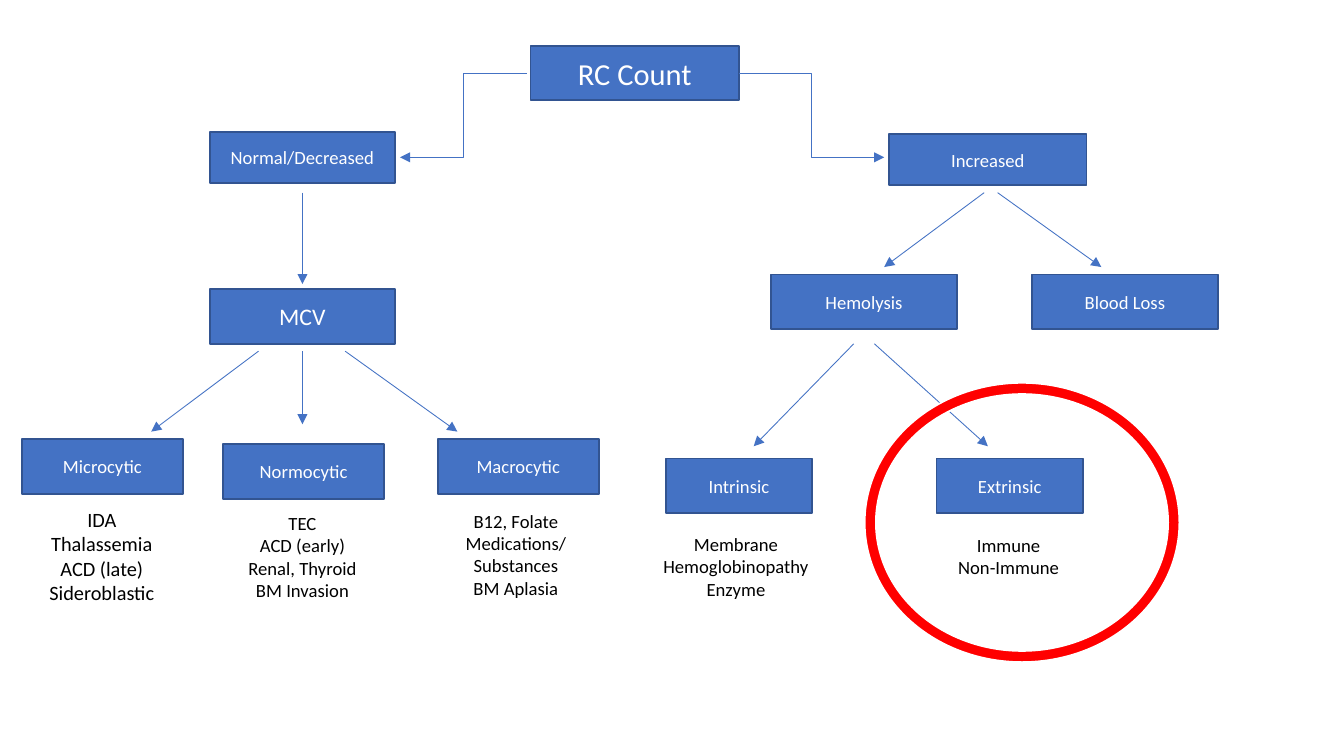
from pptx import Presentation
from pptx.dml.color import RGBColor as RGB
from pptx.enum.shapes import MSO_CONNECTOR as LINK, MSO_SHAPE as SHAPE
from pptx.enum.text import MSO_ANCHOR as ANCHOR, MSO_AUTO_SIZE as AUTO, PP_ALIGN as ALIGN
from pptx.oxml.ns import qn
from pptx.util import Inches, Pt
from lxml.etree import SubElement

COLORS = {"blue": "4472C4", "edge": "325491", "red": "FF0000",
          "white": "FFFFFF", "black": "000000"}
FRAME = {"word_wrap": True, "vertical_anchor": ANCHOR.MIDDLE}
NOTE = {"word_wrap": True, "auto_size": AUTO.SHAPE_TO_FIT_TEXT}


def color(name):
    return RGB.from_string(COLORS[name])


def inches(*values):
    return [Inches(v) for v in values]


def style(item, values):
    for name, value in values.items():
        setattr(item, name, value)


def write(frame, lines, size, ink, layout):
    style(frame, layout)
    for i, line in enumerate(lines):
        para = frame.paragraphs[0] if i == 0 else frame.add_paragraph()
        para.alignment = ALIGN.CENTER
        run = para.add_run()
        run.text = line
        style(run.font, {"name": "Calibri", "size": Pt(size)})
        run.font.color.rgb = color(ink)


def shape(slide, kind, box, fill, edge):
    item = slide.shapes.add_shape(kind, *inches(*box))
    item.shadow.inherit = False
    item.fill.solid()
    item.fill.fore_color.rgb = color(fill)
    item.line.color.rgb = color(edge)
    item.line.width = Pt(1)
    return item


def node(slide, box, text, size=11):
    item = shape(slide, SHAPE.RECTANGLE, box, "blue", "edge")
    write(item.text_frame, [text], size, "white", FRAME)


def note(slide, box, lines, size=11):
    item = slide.shapes.add_textbox(*inches(*box))
    write(item.text_frame, lines, size, "black", NOTE)


def arrow(slide, start, end, kind=LINK.STRAIGHT):
    line = slide.shapes.add_connector(kind, *inches(*start, *end))
    line.line.color.rgb = color("blue")
    line.line.width = Pt(0.5)
    SubElement(line.line._get_or_add_ln(), qn("a:tailEnd"), type="triangle")
    SubElement(line._element.spPr, qn("a:effectLst"))


# Root count and its two bent arrows
def root(slide, x, y, w, h):
    node(slide, (x, y, w, h), "RC Count", 18)
    mid, low = y + h / 2, y + 0.91
    arrow(slide, (x - 0.03, mid), (x - 1.07, low), LINK.ELBOW)
    arrow(slide, (x + w, mid), (x + w + 1.19, low), LINK.ELBOW)


# Normal or decreased count, split by cell volume
def normal(slide, x, y, w):
    mid = x + w / 2
    node(slide, (x + 1.72, y, 1.52, 0.42), "Normal/Decreased")
    node(slide, (x + 1.72, y + 1.29, 1.52, 0.45), "MCV", 14)
    arrow(slide, (mid, y + 0.5), (mid, y + 1.25))
    cells = [
        ("Microcytic", 0.18, 2.52, (0.06, 3.03, 1.55, 0.91), 12,
         ["IDA", "Thalassemia", "ACD (late)", "Sideroblastic"], (-0.36, -1.24, 2.46)),
        ("Normocytic", 1.83, 2.56, (1.77, 3.07, 1.42, 0.84), 11,
         ["TEC", "ACD (early)", "Renal, Thyroid", "BM Invasion"], (0, 0, 2.4)),
        ("Macrocytic", 3.59, 2.52, (3.52, 3.05, 1.42, 0.84), 11,
         ["B12, Folate", "Medications/ Substances", "BM Aplasia"], (0.35, 1.27, 2.46)),
    ]
    for name, left, top, (nx, ny, nw, nh), size, lines, (start, end, low) in cells:
        arrow(slide, (mid + start, y + 1.8), (mid + end, y + low))
        node(slide, (x + left, y + top, 1.32, 0.45), name)
        note(slide, (x + nx, y + ny, nw, nh), lines, size)


# Increased count, split by cause
def raised(slide, x, y):
    node(slide, (x + 2.11, y, 1.62, 0.42), "Increased")
    causes = [("Hemolysis", 1.14, 2.89, 2.07), ("Blood Loss", 3.28, 3, 3.85)]
    for name, left, start, end in causes:
        arrow(slide, (x + start, y + 0.48), (x + end, y + 1.09))
        node(slide, (x + left, y + 1.15, 1.53, 0.45), name)
    kinds = [
        ("Intrinsic", 0.28, 1.82, 1, (0, 3.22, 1.71, 0.66),
         ["Membrane", "Hemoglobinopathy", "Enzyme"]),
        ("Extrinsic", 2.5, 1.99, 2.92, (2.38, 3.23, 1.42, 0.47),
         ["Immune", "Non-Immune"]),
    ]
    for name, left, start, end, (nx, ny, nw, nh), lines in kinds:
        arrow(slide, (x + start, y + 1.72), (x + end, y + 2.56))
        node(slide, (x + left, y + 2.66, 1.2, 0.45), name)
        note(slide, (x + nx, y + ny, nw, nh), lines)
    # Red ring around the extrinsic group
    ring = shape(slide, SHAPE.DONUT, (x + 1.91, y + 2.04, 2.58, 2.29), "red", "white")
    ring.adjustments[0] = 0.04


def main():
    deck = Presentation()
    style(deck, {"slide_width": Inches(11.02), "slide_height": Inches(6.2)})
    slide = deck.slides.add_slide(deck.slide_layouts[6])
    root(slide, 4.35, 0.38, 1.71, 0.44)
    normal(slide, 0, 1.08, 4.96)
    raised(slide, 5.18, 1.1)
    deck.save("out.pptx")


if __name__ == "__main__":
    main()
